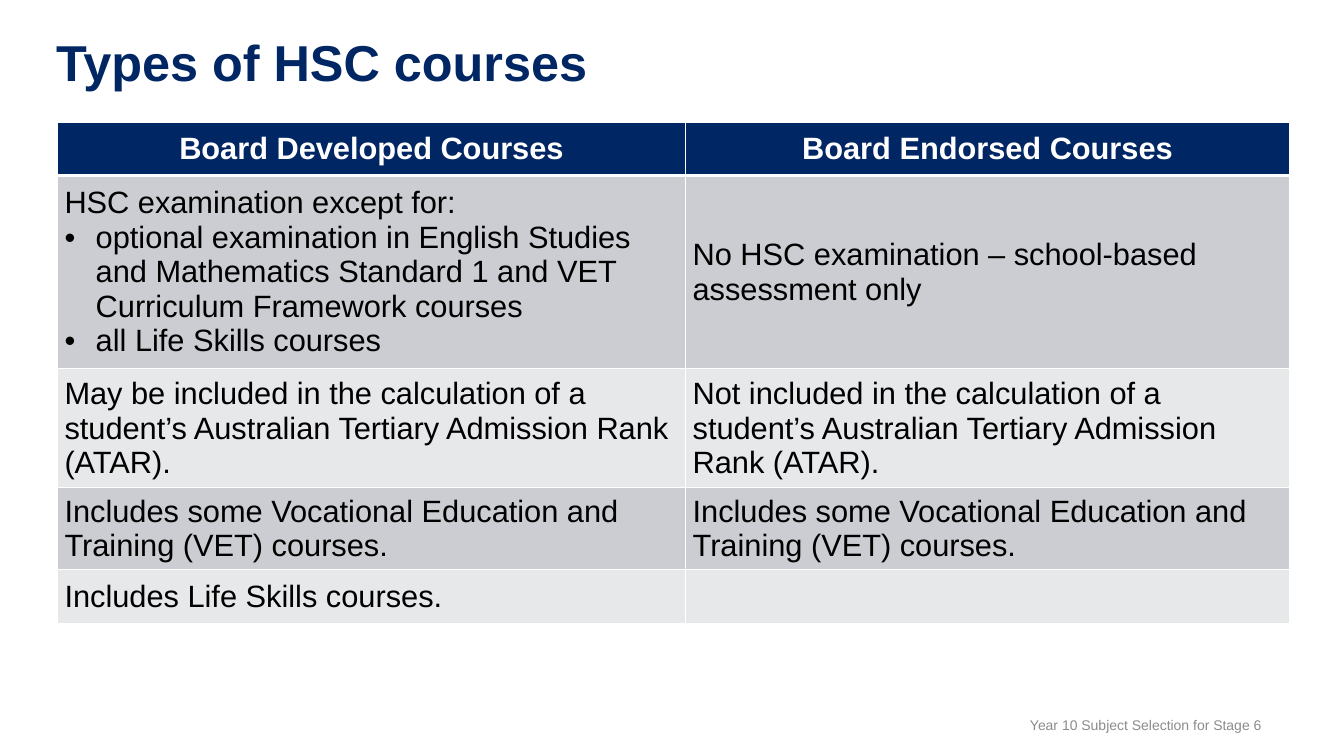
from dataclasses import dataclass

from lxml import etree
from pptx import Presentation
from pptx.dml.color import RGBColor
from pptx.enum.text import MSO_ANCHOR, PP_ALIGN
from pptx.oxml.ns import qn
from pptx.util import Emu, Pt

LEFT, CENTER, RIGHT = PP_ALIGN.LEFT, PP_ALIGN.CENTER, PP_ALIGN.RIGHT
TOP, MIDDLE, BOTTOM = MSO_ANCHOR.TOP, MSO_ANCHOR.MIDDLE, MSO_ANCHOR.BOTTOM
EMU_PER_PX = 9144  # 100 px to the inch


@dataclass(frozen=True)
class Theme:
    font: str = "Arial"
    navy: str = "002664"
    white: str = "FFFFFF"
    black: str = "000000"
    grey: str = "8C8C8C"
    bands: tuple[str, str] = ("CCCDD3", "E7E8EA")
    title_pt: int = 36
    table_pt: int = 22
    footer_pt: int = 10
    rule_pt: int = 1
    header_rule_pt: int = 3


@dataclass(frozen=True)
class Label:
    text: str
    box: tuple[int, int, int, int]
    size: int
    color: str
    bold: bool = False
    align: PP_ALIGN = LEFT
    anchor: MSO_ANCHOR = TOP
    inset: tuple[int, int] = (10, 5)
    line_spacing: float = 1.0


@dataclass(frozen=True)
class CourseRow:
    height: int
    developed: str
    endorsed: str
    bullets: tuple[str, ...] = ()


THEME = Theme()
TABLE_LEFT, TABLE_TOP = 57, 121
COLUMN_WIDTHS = (623, 599)
CELL_INSET = (7, 4)
BULLET_INDENT = 31

LABELS = (
    Label("Year 10 Subject Selection for Stage 6", (801, 711, 450, 17),
          THEME.footer_pt, THEME.grey, align=RIGHT, anchor=BOTTOM, inset=(0, 0)),
    Label("Types of HSC courses", (46, 33, 1204, 63),
          THEME.title_pt, THEME.navy, bold=True, line_spacing=0.9),
)
VET = "Includes some Vocational Education and Training (VET) courses."
ATAR = "included in the calculation of a student’s Australian Tertiary Admission Rank (ATAR)."
ROWS = (
    CourseRow(53, "Board Developed Courses", "Board Endorsed Courses"),
    CourseRow(192, "HSC examination except for:",
              "No HSC examination – school-based assessment only",
              ("optional examination in English Studies and Mathematics Standard 1 "
               "and VET Curriculum Framework courses",
               "all Life Skills courses")),
    CourseRow(118, f"May be {ATAR}", f"Not {ATAR}"),
    CourseRow(81, VET, VET),
    CourseRow(53, "Includes Life Skills courses.", ""),
)


def px(n: int) -> Emu:
    return Emu(n * EMU_PER_PX)


def style_paragraph(p, size: int, color: str, bold: bool, align: PP_ALIGN) -> None:
    p.alignment = align
    for r in p.runs:
        r.font.name = THEME.font
        r.font.size = Pt(size)
        r.font.bold = bold
        r.font.color.rgb = RGBColor.from_string(color)


def set_insets(target, inset: tuple[int, int]) -> None:
    target.margin_left = target.margin_right = px(inset[0])
    target.margin_top = target.margin_bottom = px(inset[1])


def add_label(slide, label: Label) -> None:
    tf = slide.shapes.add_textbox(*map(px, label.box)).text_frame
    tf.word_wrap = True
    tf.vertical_anchor = label.anchor
    set_insets(tf, label.inset)
    tf.text = label.text
    p = tf.paragraphs[0]
    p.line_spacing = label.line_spacing
    style_paragraph(p, label.size, label.color, label.bold, label.align)


def add_bullet(p) -> None:
    pPr = p._p.get_or_add_pPr()
    pPr.set("marL", str(px(BULLET_INDENT)))
    pPr.set("indent", str(-px(BULLET_INDENT)))
    etree.SubElement(pPr, qn("a:buFont")).set("typeface", THEME.font)
    etree.SubElement(pPr, qn("a:buChar")).set("char", "•")


def add_borders(cell, row: int) -> None:
    """Rule all four sides, with a heavier rule below the header row."""
    tcPr = cell._tc.get_or_add_tcPr()
    heavy_side = {0: "lnB", 1: "lnT"}.get(row)
    for side in ("lnL", "lnR", "lnT", "lnB"):
        width = THEME.header_rule_pt if side == heavy_side else THEME.rule_pt
        ln = etree.SubElement(tcPr, qn(f"a:{side}"), w=str(Pt(width)))
        fill = etree.SubElement(ln, qn("a:solidFill"))
        etree.SubElement(fill, qn("a:srgbClr")).set("val", THEME.white)


def fill_cell(cell, row: int, lines: tuple[str, ...]) -> None:
    header = row == 0
    add_borders(cell, row)
    cell.fill.solid()
    fill = THEME.navy if header else THEME.bands[(row - 1) % 2]
    cell.fill.fore_color.rgb = RGBColor.from_string(fill)
    cell.vertical_anchor = MIDDLE
    set_insets(cell, CELL_INSET)
    tf = cell.text_frame
    tf.text = "\n".join(lines)
    for i, p in enumerate(tf.paragraphs):
        if i:
            add_bullet(p)
        style_paragraph(p, THEME.table_pt, THEME.white if header else THEME.black,
                        header, CENTER if header else LEFT)


def add_course_table(slide) -> None:
    height = sum(row.height for row in ROWS)
    table = slide.shapes.add_table(
        len(ROWS), len(COLUMN_WIDTHS), px(TABLE_LEFT), px(TABLE_TOP),
        px(sum(COLUMN_WIDTHS)), px(height)).table
    for column, width in zip(table.columns, COLUMN_WIDTHS):
        column.width = px(width)
    for i, row in enumerate(ROWS):
        table.rows[i].height = px(row.height)
        fill_cell(table.cell(i, 0), i, (row.developed, *row.bullets))
        fill_cell(table.cell(i, 1), i, (row.endorsed,))


def main() -> None:
    prs = Presentation()
    prs.slide_width, prs.slide_height = px(1333), px(750)
    slide = prs.slides.add_slide(prs.slide_layouts[6])
    for label in LABELS:
        add_label(slide, label)
    add_course_table(slide)
    prs.save("out.pptx")


if __name__ == "__main__":
    main()
